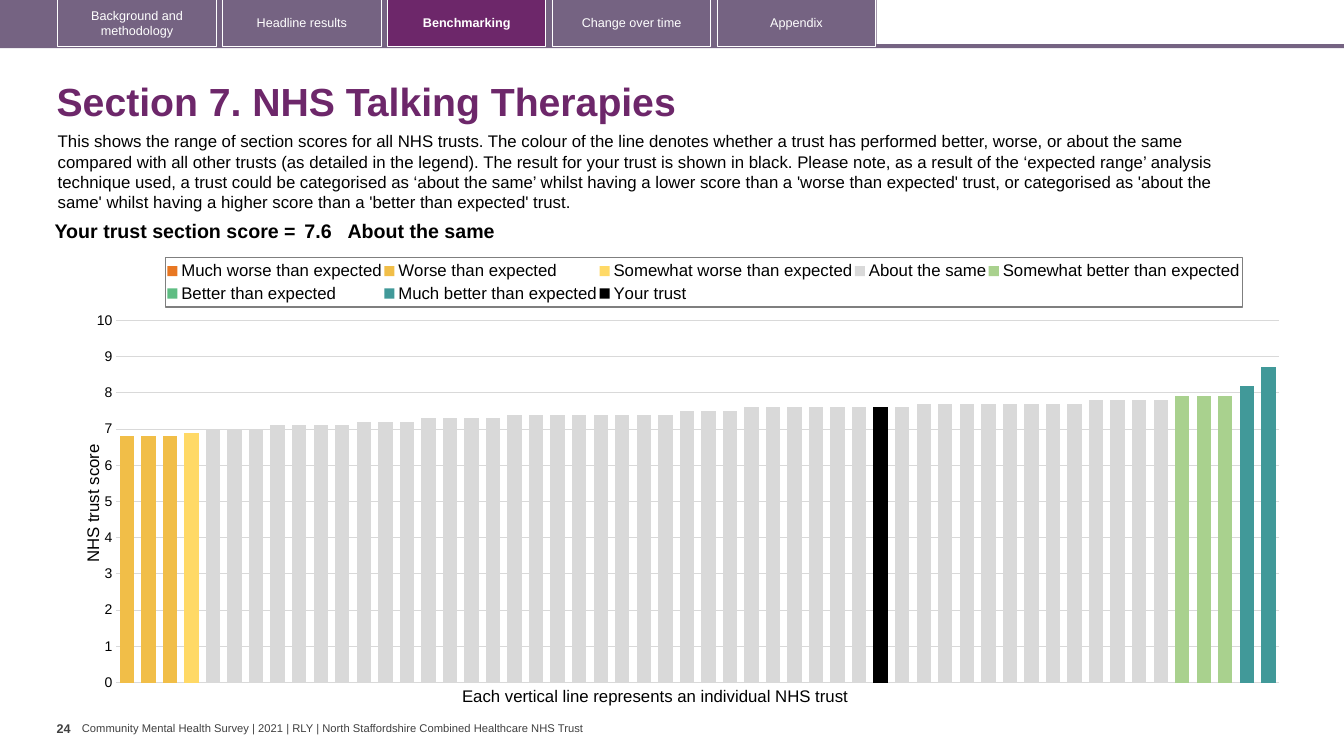
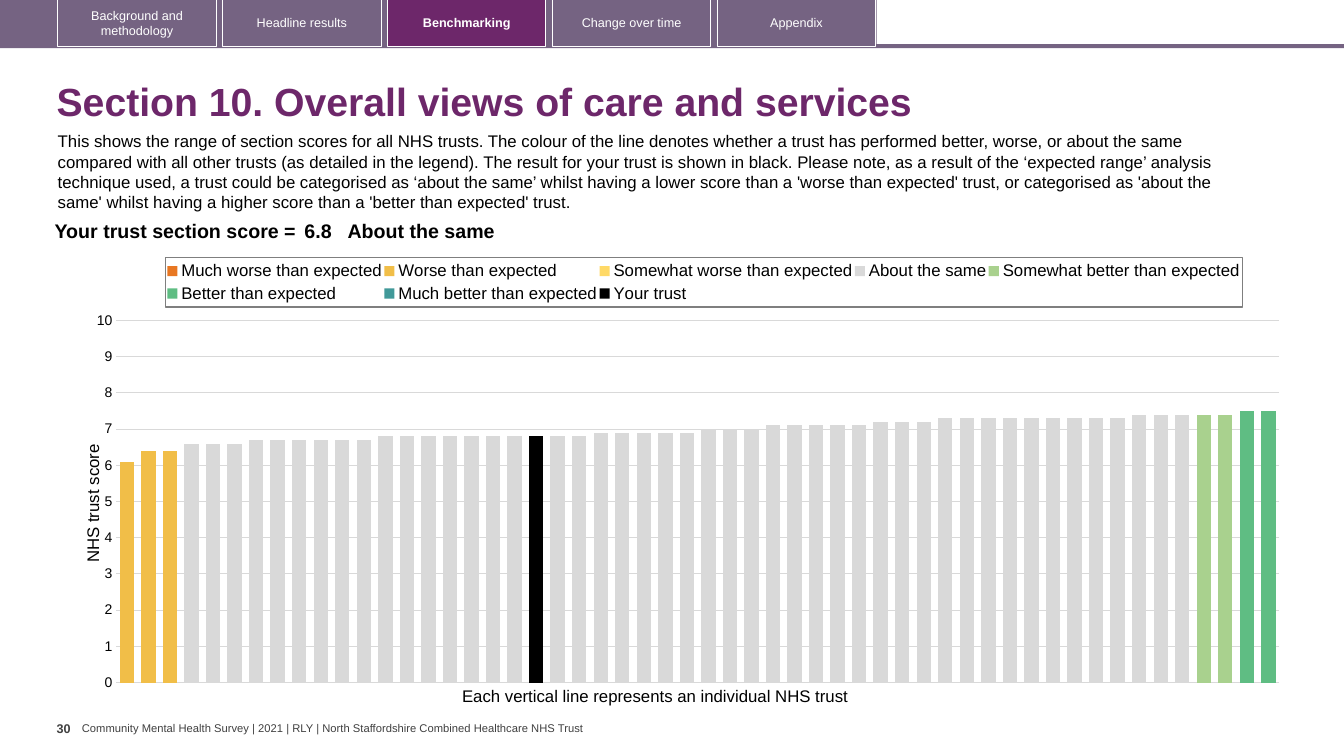
from collections import Counter
from copy import deepcopy
from dataclasses import dataclass

from pptx import Presentation
from pptx.chart.chart import Chart
from pptx.chart.data import CategoryChartData as ChartData
from pptx.dml.color import RGBColor
from pptx.enum.chart import XL_CHART_TYPE as Kind
from pptx.enum.chart import XL_LEGEND_POSITION as Spot
from pptx.enum.chart import XL_TICK_LABEL_POSITION as Label
from pptx.enum.chart import XL_TICK_MARK as Tick
from pptx.enum.shapes import MSO_SHAPE as Form
from pptx.enum.text import MSO_ANCHOR as Anchor
from pptx.enum.text import PP_ALIGN as Align
from pptx.oxml import parse_xml
from pptx.oxml.ns import nsdecls, qn
from pptx.slide import Slide
from pptx.util import Pt

SCALE = 9525
WIDTH, HEIGHT = 1280, 720
FACE = "Arial"
BLACK, WHITE, GREY = "000000", "FFFFFF", "404040"
PLUM, MAUVE = "6D276A", "756382"
GRID, FRAME = "D9D9D9", "7F7F7F"

TABS = ("Background and methodology", "Headline results", "Benchmarking",
        "Change over time", "Appendix")
ACTIVE = "Benchmarking"
FOOTER = ("Community Mental Health Survey | 2021 | RLY | "
          "North Staffordshire Combined Healthcare NHS Trust")
INTRO = (
    "This shows the range of section scores for all NHS trusts. The colour of the line "
    "denotes whether a trust has performed better, worse, or about the same compared with "
    "all other trusts (as detailed in the legend). The result for your trust is shown in "
    "black. Please note, as a result of the ‘expected range’ analysis technique used, a "
    "trust could be categorised as ‘about the same’ whilst having a lower score than a "
    "'worse than expected' trust, or categorised as 'about the same' whilst having a "
    "higher score than a 'better than expected' trust."
)
GRADES = {
    "Much worse than expected": "E87722",
    "Worse than expected": "F1BE48",
    "Somewhat worse than expected": "FFD966",
    "About the same": "D9D9D9",
    "Somewhat better than expected": "A9D18E",
    "Better than expected": "5FBD83",
    "Much better than expected": "419999",
}


@dataclass(frozen=True)
class Box:
    left: int
    top: int
    width: int
    height: int

    def emu(self) -> tuple[int, ...]:
        return tuple(px(n) for n in (self.left, self.top, self.width, self.height))


@dataclass(frozen=True)
class Style:
    size: int
    color: str = BLACK
    bold: bool = False


@dataclass(frozen=True)
class Section:
    title: str
    page: str
    tally: dict[float, int]
    counts: tuple[int, ...]
    own: int
    grade: str = "About the same"

    def scores(self) -> list[float]:
        return list(Counter(self.tally).elements())


SECTIONS = (
    Section(
        "Section 7. NHS Talking Therapies", "24",
        {6.8: 3, 6.9: 1, 7.0: 3, 7.1: 4, 7.2: 3, 7.3: 4, 7.4: 8, 7.5: 3,
         7.6: 8, 7.7: 8, 7.8: 4, 7.9: 3, 8.2: 1, 8.7: 1},
        (0, 3, 1, 45, 3, 0, 2), 35),
    Section(
        "Section 10. Overall views of care and services", "30",
        {6.1: 1, 6.4: 2, 6.6: 3, 6.7: 6, 6.8: 10, 6.9: 5, 7.0: 3, 7.1: 5,
         7.2: 3, 7.3: 9, 7.4: 5, 7.5: 2},
        (0, 3, 0, 47, 2, 2, 0), 19),
)


def px(count: int) -> int:
    return count * SCALE


def tint(code: str) -> RGBColor:
    return RGBColor.from_string(code)


def dress(font, style: Style) -> None:
    font.name = FACE
    font.size = Pt(style.size)
    font.bold = style.bold
    font.color.rgb = tint(style.color)


def write(slide: Slide, box: Box, text: str, style: Style, wrap: bool = True,
          side: int = 10, edge: int = 5, anchor: Anchor = Anchor.TOP,
          pitch: float = 1.0) -> None:
    frame = slide.shapes.add_textbox(*box.emu()).text_frame
    frame.word_wrap = wrap
    frame.vertical_anchor = anchor
    frame.margin_left = frame.margin_right = px(side)
    frame.margin_top = frame.margin_bottom = px(edge)
    line = frame.paragraphs[0]
    line.text = text
    line.line_spacing = pitch
    dress(line.font, style)


def block(slide: Slide, box: Box, fill: str = "", edge: str = ""):
    shape = slide.shapes.add_shape(Form.RECTANGLE, *box.emu())
    shape.shadow.inherit = False
    if fill:
        shape.fill.solid()
        shape.fill.fore_color.rgb = tint(fill)
    else:
        shape.fill.background()
    if edge:
        shape.line.color.rgb = tint(edge)
        shape.line.width = Pt(0.75)
    else:
        shape.line.fill.background()
    return shape


def banner(slide: Slide) -> None:
    block(slide, Box(0, 42, WIDTH, 4), MAUVE)
    block(slide, Box(0, 0, 835, 45), MAUVE)
    for place, name in enumerate(TABS):
        live = name == ACTIVE
        tab = block(slide, Box(55 + 157 * place, -1, 151, 45), PLUM if live else "", WHITE)
        frame = tab.text_frame
        frame.word_wrap = True
        frame.vertical_anchor = Anchor.MIDDLE
        line = frame.paragraphs[0]
        line.text = name
        line.alignment = Align.CENTER
        dress(line.font, Style(9, WHITE, live))


def result(slide: Slide, part: Section) -> None:
    table = slide.shapes.add_table(1, 3, *Box(34, 206, 1122, 30).emu()).table
    table.first_row = table.horz_banding = False
    texts = ("Your trust section score =", f"{part.scores()[part.own]:.1f}", part.grade)
    for col, (text, width, side) in enumerate(zip(texts, (252, 45, 825), (4, 4, 0))):
        table.columns[col].width = px(width)
        cell = table.cell(0, col)
        cell.fill.background()
        cell.margin_left = cell.margin_right = px(side)
        cell.margin_top = cell.margin_bottom = px(4)
        line = cell.text_frame.paragraphs[0]
        line.text = text
        line.alignment = Align.LEFT if col else Align.RIGHT
        dress(line.font, Style(14, BLACK, True))


def layout(host, index: int, target: str = "", **sizes: float) -> None:
    for old in host.findall(qn("c:layout")):
        host.remove(old)
    inner = f'<c:layoutTarget val="{target}"/>' if target else ""
    modes = '<c:xMode val="edge"/><c:yMode val="edge"/>'
    spans = "".join(f'<c:{key} val="{size}"/>' for key, size in sizes.items())
    host.insert(index, parse_xml(
        f'<c:layout {nsdecls("c")}><c:manualLayout>{inner}{modes}{spans}'
        "</c:manualLayout></c:layout>"))


def split(chart: Chart) -> None:
    area = chart.plots[0]._element.getparent()
    first = area.find(qn("c:barChart"))
    second = deepcopy(first)
    first.remove(first.findall(qn("c:ser"))[-1])
    for ser in second.findall(qn("c:ser"))[:-1]:
        second.remove(ser)
    first.addnext(second)
    value = area.find(qn("c:valAx"))
    right = deepcopy(value)
    base = deepcopy(area.find(qn("c:catAx")))
    for tag in ("c:majorGridlines", "c:title"):
        right.remove(right.find(qn(tag)))
    right.find(qn("c:axPos")).set("val", "r")
    right.find(qn("c:tickLblPos")).set("val", "none")
    right.find(qn("c:crosses")).set("val", "max")
    value.addnext(right)
    right.addnext(base)
    for node in (second, right, base):
        for mark in node.iter(qn("c:axId"), qn("c:crossAx")):
            mark.set("val", mark.get("val")[:-1] + "9")


def axes(chart: Chart) -> None:
    chart.category_axis.visible = False
    axis = chart.value_axis
    axis.minimum_scale, axis.maximum_scale, axis.major_unit = 0, 10, 1
    axis.major_tick_mark = axis.minor_tick_mark = Tick.NONE
    axis.tick_label_position = Label.NEXT_TO_AXIS
    axis.tick_labels.number_format = "0"
    axis.tick_labels.number_format_is_linked = False
    dress(axis.tick_labels.font, Style(10))
    axis.format.line.fill.background()
    rule = axis.major_gridlines.format.line
    rule.color.rgb = tint(GRID)
    rule.width = Pt(0.75)
    title = axis.axis_title
    title.text_frame.text = "NHS trust score"
    dress(title.text_frame.paragraphs[0].font, Style(12))
    body = title._element.find(".//" + qn("a:bodyPr"))
    body.set("rot", "-5400000")
    body.set("vert", "horz")
    layout(title._element, 1, x=0.01, y=0.43)


def legend(chart: Chart) -> None:
    chart.has_legend = True
    key = chart.legend
    key.position = Spot.TOP
    key.include_in_layout = False
    dress(key.font, Style(12))
    root = key._element
    layout(root, 1, x=0.08, y=0.02, w=0.88, h=0.11)
    root.find(qn("c:txPr")).addprevious(parse_xml(
        f'<c:spPr {nsdecls("c", "a")}><a:ln w="9525"><a:solidFill>'
        f'<a:srgbClr val="{FRAME}"/></a:solidFill></a:ln></c:spPr>'))


def graph(slide: Slide, part: Section) -> None:
    scores = part.scores()
    total = len(scores)
    data = ChartData(number_format="0.0")
    data.categories = [str(n + 1) for n in range(total)]
    start = 0
    for name, count in zip(GRADES, part.counts):
        stop = start + count
        data.add_series(name, [scores[n] if start <= n < stop else None
                               for n in range(total)])
        start = stop
    data.add_series("Your trust", [scores[n] if n == part.own else None
                                   for n in range(total)])
    chart = slide.shapes.add_chart(
        Kind.COLUMN_CLUSTERED, *Box(64, 237, 1166, 426).emu(), data).chart
    chart.has_title = False
    dress(chart.font, Style(10))
    chart.font.name = "Calibri"
    plot = chart.plots[0]
    plot.vary_by_categories = False
    plot.gap_width, plot.overlap = 50, 100
    for bars, code in zip(plot.series, (*GRADES.values(), BLACK)):
        bars.format.fill.solid()
        bars.format.fill.fore_color.rgb = tint(code)
        bars.invert_if_negative = False
    axes(chart)
    legend(chart)
    layout(plot._element.getparent(), 0, "inner", x=0.04, y=0.16, w=0.95, h=0.81)
    split(chart)


def build(slide: Slide, part: Section) -> None:
    banner(slide)
    write(slide, Box(78, 687, 485, 12), FOOTER, Style(8, GREY), wrap=False,
          side=0, edge=0, anchor=Anchor.MIDDLE)
    write(slide, Box(44, 64, 1199, 69), part.title, Style(28, PLUM, True),
          anchor=Anchor.MIDDLE, pitch=0.9)
    write(slide, Box(54, 682, 24, 38), part.page, Style(9, GREY, True), wrap=False, side=0)
    write(slide, Box(45, 120, 1164, 87), INTRO, Style(12))
    write(slide, Box(430, 648, 395, 29),
          "Each vertical line represents an individual NHS trust", Style(12), wrap=False)
    graph(slide, part)
    result(slide, part)


def main() -> None:
    deck = Presentation()
    deck.slide_width, deck.slide_height = px(WIDTH), px(HEIGHT)
    for part in SECTIONS:
        build(deck.slides.add_slide(deck.slide_layouts[6]), part)
    deck.save("out.pptx")


if __name__ == "__main__":
    main()
